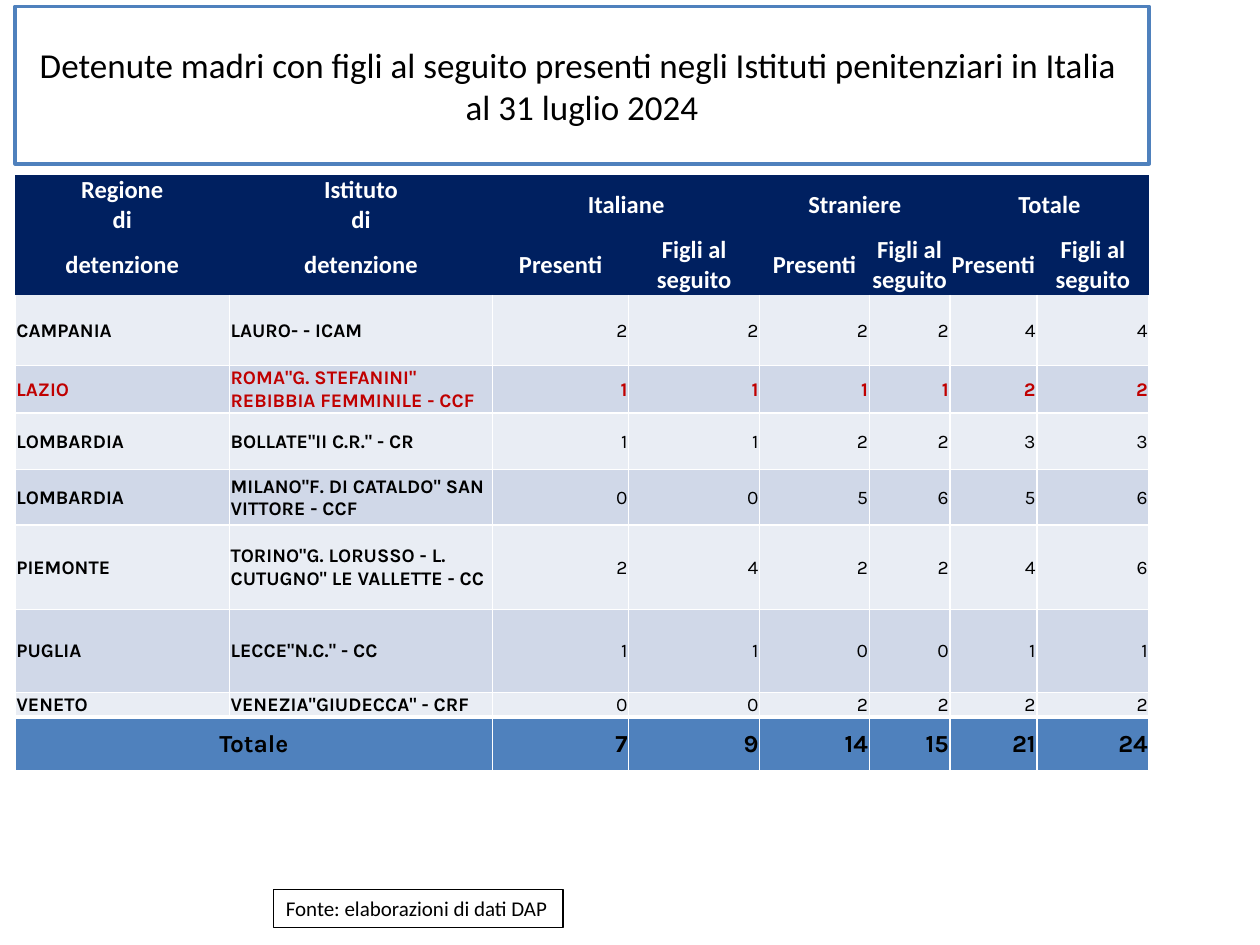
import pptx
import pptx.dml.color
import pptx.enum.text
import pptx.oxml
import pptx.oxml.ns
import pptx.util

Inches = pptx.util.Inches
Pt = pptx.util.Pt
Align = pptx.enum.text.PP_ALIGN
Anchor = pptx.enum.text.MSO_ANCHOR

WIDTHS = [1.7, 2.09, 1.08, 1.04, 0.87, 0.64, 0.69, 0.89]
HEIGHTS = [0.24, 0.24, 0.47, 0.56, 0.37, 0.45, 0.44, 0.67, 0.66, 0.19, 0.43]
GROUPS = ["Italiane", "Straniere", "Totale"]
STEMS = ["di", "detenzione"]
PRISONS = [
    ("CAMPANIA", "LAURO- - ICAM", 2, 2, 2, 2, 4, 4),
    ("LAZIO", 'ROMA"G. STEFANINI" REBIBBIA FEMMINILE - CCF', 1, 1, 1, 1, 2, 2),
    ("LOMBARDIA", 'BOLLATE"II C.R." - CR', 1, 1, 2, 2, 3, 3),
    ("LOMBARDIA", 'MILANO"F. DI CATALDO" SAN VITTORE - CCF', 0, 0, 5, 6, 5, 6),
    ("PIEMONTE", 'TORINO"G. LORUSSO - L. CUTUGNO" LE VALLETTE - CC',
     2, 4, 2, 2, 4, 6),
    ("PUGLIA", 'LECCE"N.C." - CC', 1, 1, 0, 0, 1, 1),
    ("VENETO", 'VENEZIA"GIUDECCA" - CRF', 0, 0, 2, 2, 2, 2),
]
TOTALS = [7, 9, 14, 15, 21, 24]


def color(code):
    return pptx.dml.color.RGBColor.from_string(code)


class Deck:
    sans, body = "Calibri", "Karla"
    navy, blue, red = "002060", "4F81BD", "C00000"
    black, white = "000000", "FFFFFF"
    bands = ["E9EDF4", "D0D8E8"]

    def __init__(self):
        self.show = pptx.Presentation()
        self.show.slide_width = Inches(10)
        self.show.slide_height = Inches(7.5)
        self.slide = self.show.slides.add_slide(self.show.slide_layouts[5])

    def text(self, para, words, size, font, ink, bold=False):
        run = para.add_run()
        run.text = words
        run.font.size = Pt(size)
        run.font.name = font
        run.font.bold = bold
        run.font.color.rgb = color(ink)

    def frame(self, shape, ink, width):
        """Give a shape a white fill and an outline."""
        shape.fill.solid()
        shape.fill.fore_color.rgb = color(self.white)
        shape.line.color.rgb = color(ink)
        shape.line.width = Pt(width)

    def title(self, lines, left, top, width, height):
        box = self.slide.shapes.title
        box.left, box.top = Inches(left), Inches(top)
        box.width, box.height = Inches(width), Inches(height)
        self.frame(box, self.blue, 2)
        box.text_frame.vertical_anchor = Anchor.MIDDLE
        para = box.text_frame.paragraphs[0]
        para.alignment = Align.CENTER
        for i, line in enumerate(lines):
            if i:
                para.add_line_break()
            self.text(para, line, 20, self.sans, self.black)

    def note(self, words, left, top, width, height):
        box = self.slide.shapes.add_textbox(
            Inches(left), Inches(top), Inches(width), Inches(height))
        self.frame(box, self.black, 0.75)
        box.text_frame.word_wrap = False
        box.text_frame.auto_size = pptx.enum.text.MSO_AUTO_SIZE.SHAPE_TO_FIT_TEXT
        self.text(box.text_frame.paragraphs[0], words, 12, self.sans, self.black)

    def grid(self, left, top, widths, heights):
        table = self.slide.shapes.add_table(
            len(heights), len(widths), Inches(left), Inches(top),
            Inches(sum(widths)), Inches(sum(heights))).table
        for col, width in zip(table.columns, widths):
            col.width = Inches(width)
        for row, height in zip(table.rows, heights):
            row.height = Inches(height)
        return table

    def edge(self, cell, sides):
        """Draw white cell borders; a width of 0 leaves a side bare."""
        props = cell._tc.get_or_add_tcPr()
        space = pptx.oxml.ns.nsdecls("a")
        for i, (side, width) in enumerate(sides.items()):
            paint = (f'<a:solidFill><a:srgbClr val="{self.white}"/></a:solidFill>'
                     if width else "<a:noFill/>")
            props.insert(i, pptx.oxml.parse_xml(
                f'<a:{side} {space} w="{Pt(width)}">{paint}</a:{side}>'))

    def cell(self, cell, words, fill, align, style, pad, sides):
        cell.fill.solid()
        cell.fill.fore_color.rgb = color(fill)
        cell.vertical_anchor = Anchor.MIDDLE
        cell.margin_left = cell.margin_right = cell.margin_top = Inches(pad)
        cell.margin_bottom = 0
        para = cell.text_frame.paragraphs[0]
        para.alignment = align
        if words:
            self.text(para, words, *style)
        self.edge(cell, sides)

    def head(self, table):
        style = (14, self.sans, self.white, True)
        bare = dict.fromkeys(["lnL", "lnR", "lnT", "lnB"], 0)
        pairs = ["Presenti", "Figli al seguito"] * len(GROUPS)
        tops = [words for name in GROUPS for words in (name, "")]
        rows = [["Regione", "Istituto"] + tops,
                [STEMS[0]] * 2 + [""] * len(tops),
                [STEMS[1]] * 2 + pairs]
        for r, row in enumerate(rows):
            for c, words in enumerate(row):
                self.cell(table.cell(r, c), words, self.navy, Align.CENTER,
                          style, 0, bare)
        for c in range(2, len(WIDTHS), 2):
            table.cell(0, c).merge(table.cell(1, c + 1))

    def rows(self, table, first):
        for i, row in enumerate(PRISONS):
            hot = row[0] == "LAZIO"
            ink = self.red if hot else self.black
            sides = {"lnL": 1, "lnR": 1, "lnT": 1 if i else 0,
                     "lnB": 1 if i < len(PRISONS) - 1 else 3}
            for c, value in enumerate(row):
                label = c < 2
                self.cell(table.cell(first + i, c), str(value),
                          self.bands[i % 2],
                          Align.LEFT if label else Align.RIGHT,
                          (11, self.body, ink, label or hot), 0.01, sides)

    def total(self, table, row):
        style = (14, self.body, self.black, True)
        sides = {"lnL": 1, "lnR": 1, "lnT": 3, "lnB": 1}
        for c, value in enumerate(["Totale", ""] + TOTALS):
            self.cell(table.cell(row, c), str(value), self.blue,
                      Align.RIGHT if c > 1 else Align.CENTER,
                      style, 0.01, sides)
        table.cell(row, 0).merge(table.cell(row, 1))


def main():
    deck = Deck()
    deck.title(["Detenute madri con figli al seguito presenti negli Istituti "
                "penitenziari in Italia ", "al 31 luglio 2024"],
               0.12, 0.05, 9, 1.25)
    deck.note("Fonte: elaborazioni di dati DAP", 2.17, 7.06, 2.3, 0.3)
    table = deck.grid(0.12, 1.39, WIDTHS, HEIGHTS)
    deck.head(table)
    deck.rows(table, 3)
    deck.total(table, len(HEIGHTS) - 1)
    deck.show.save("out.pptx")


if __name__ == "__main__":
    main()
